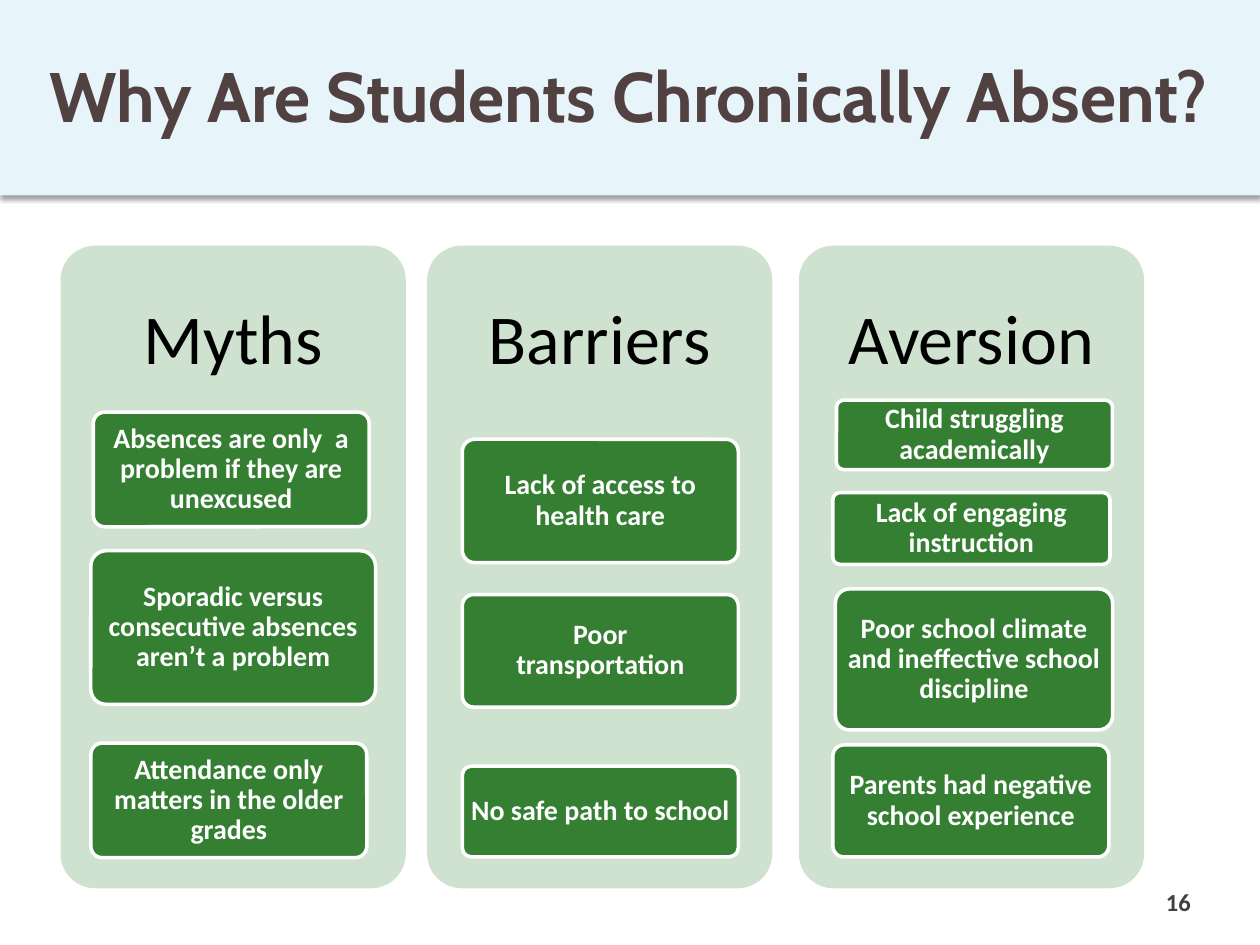
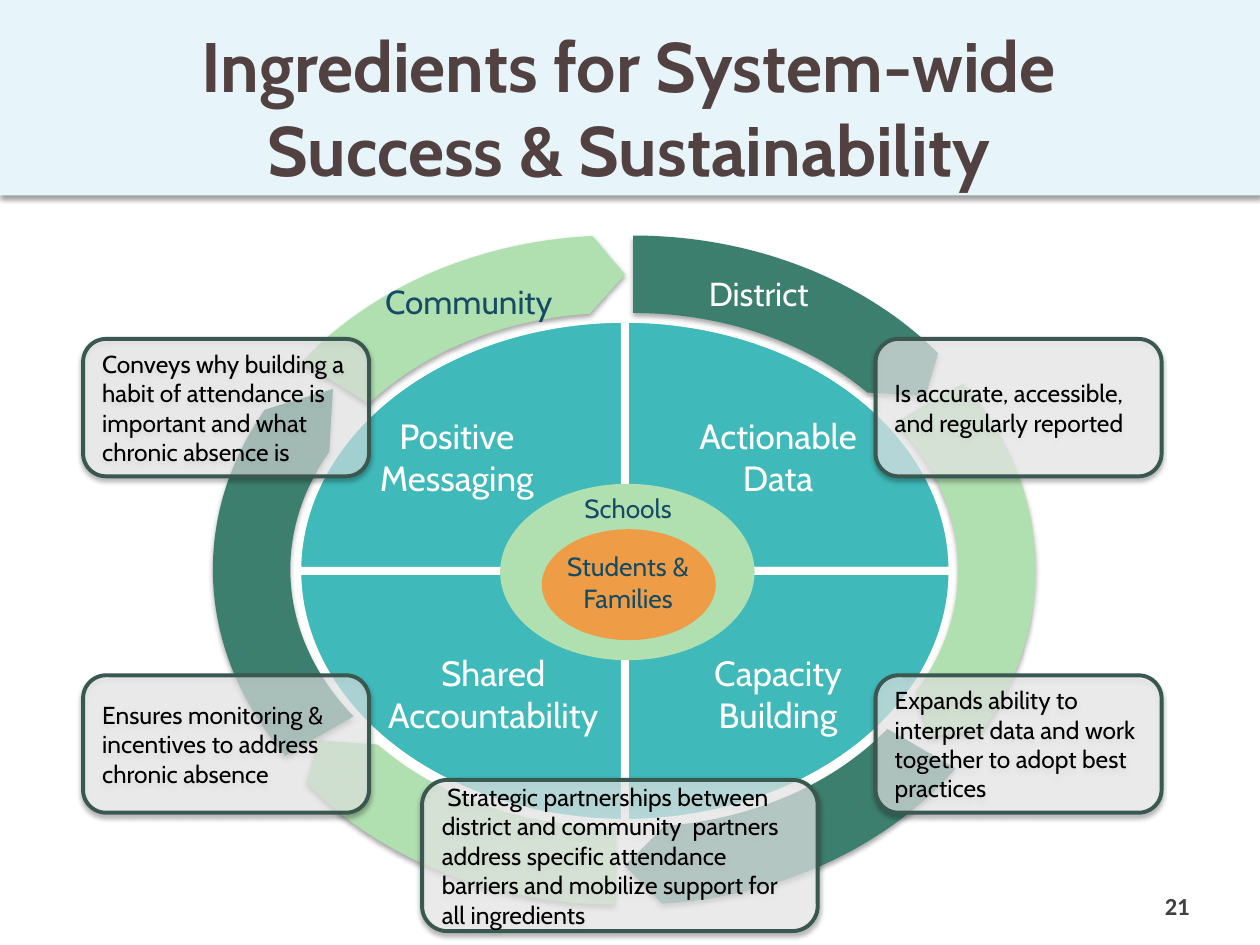
from lxml.etree import SubElement
from pptx import Presentation
from pptx.dml.color import RGBColor
from pptx.enum.shapes import MSO_SHAPE
from pptx.enum.text import MSO_ANCHOR, MSO_AUTO_SIZE, PP_ALIGN
from pptx.oxml.ns import qn
from pptx.util import Pt

SLIDE_W, SLIDE_H, BAND_H = 720, 540, 111.6
BAND, TITLE, GRAY, WHITE, BLACK = "E7F4FA", "514141", "404040", "FFFFFF", "000000"
COLUMN, CARD = "CFE2CF", "347F32"
TEAL, FOREST, MINT, ORANGE, NAVY, EDGE = "3FB9B9", "3D7F6E", "B1E0B0", "EE9D46", "154B64", "3A5750"

COLUMN_TOP, COLUMN_W, COLUMN_H, HEADING_H = 140.4, 197.3, 367.2, 110.2
CAUSES = [  # heading, left, cards as (text, left, top, width, height)
    ("Myths", 34.6, [
        ("Absences are only  a problem if they are unexcused", 53.3, 235.5, 157.7, 65.5),
        ("Sporadic versus consecutive absences aren’t a problem", 51.9, 314.7, 162.7, 87.8),
        ("Attendance only matters in the older grades", 51.9, 424.6, 157.7, 65.5)]),
    ("Barriers", 244.1, [
        ("Lack of access to health care", 264.2, 251, 157.7, 70.5),
        ("Poor\ntransportation", 264.2, 339.8, 157.7, 64.3),
        ("No safe path to school", 264.2, 437.8, 157.7, 51.8)]),
    ("Aversion", 456.5, [
        ("Child struggling academically", 478, 228.7, 157.7, 39.6),
        ("Lack of engaging instruction", 475.9, 281.5, 158.4, 41),
        ("Poor school climate and ineffective school discipline", 477.4, 336.5, 158.4, 80.6),
        ("Parents had negative school experience", 475.9, 425.7, 157.7, 64)]),
]

WHEEL = (169.9, 182.2, 374.4, 288)
QUARTER, FULL_TURN = 54, 216
QUARTER_STARTS = (162, 0, 54, 108)
ARROW_W, ARROW_H = 451.4, 368.6
ARROWS = [  # left, top, colour, thickness, head angle, end, start
    (136.1, 134.6, FOREST, 0.12, 3.28, 195.32, 162),
    (140.4, 141.1, MINT, 0.12, 3.28, 14.81, 198),
    (136.1, 148.3, FOREST, 0.12, 4.65, 50.33, 18),
    (126, 148.3, MINT, 0.12, 3.28, 87.83, 54),
    (121.7, 141.1, FOREST, 0.12, 5.57, 122.4, 90),
    (126, 134.6, MINT, 0.12, 4.1, 159.06, 127.24),
]
CORE = [((285.8, 276.5, 145.4, 100.8), MINT), ((309.6, 302.4, 99.4, 63.4), ORANGE)]
LABELS = [
    ("Students & Families", (316.8, 311, 84.2, 43.9), 15, NAVY),
    ("Schools", (316.8, 277.9, 84.2, 25.2), 15, NAVY),
    ("Actionable Data", (388.8, 233.3, 111.6, 55.4), 20, WHITE),
    ("Positive Messaging", (205.2, 233.3, 111.6, 55.4), 20, WHITE),
    ("Capacity Building", (388.8, 368.6, 111.6, 55.4), 20, WHITE),
    ("Shared Accountability", (211, 368.6, 141.8, 55.4), 20, WHITE),
    ("Community", (185.8, 157, 164.2, 30.2), 19, NAVY),
    ("District", (351.4, 152.6, 164.2, 30.2), 19, WHITE),
]
NOTE_LEFT, NOTE_RIGHT, NOTE_UPPER, NOTE_LOWER = 47.5, 500.4, 193.7, 385.9
NOTE_SIZE = (163.4, 78.5)
NOTES = [  # text, box, opacity in percent
    ("Is accurate, accessible, and regularly reported",
     (NOTE_RIGHT, NOTE_UPPER, *NOTE_SIZE), 64),
    ("Expands ability to interpret data and work together to adopt best practices",
     (NOTE_RIGHT, NOTE_LOWER, *NOTE_SIZE), 61),
    ("Conveys why building a habit of attendance is important and what chronic absence is",
     (NOTE_LEFT, NOTE_UPPER, *NOTE_SIZE), 55),
    ("Ensures monitoring & incentives to address chronic absence",
     (NOTE_LEFT, NOTE_LOWER, *NOTE_SIZE), 59),
    (" Strategic partnerships between district and community  partners address specific "
     "attendance barriers and mobilize support for all ingredients",
     (241.2, 445.7, 226.1, 86.4), 64),
]


def rgb(color):
    return RGBColor.from_string(color)


def pts(*values):
    return [Pt(v) for v in values]


def write(shape, text, size, color, font="Cabin", bold=False, align=PP_ALIGN.CENTER,
          anchor=MSO_ANCHOR.TOP, spacing=None, inset=None):
    tf = shape.text_frame
    tf.text = text
    tf.word_wrap = True
    tf.auto_size = MSO_AUTO_SIZE.NONE
    tf.vertical_anchor = anchor
    if inset is not None:
        tf.margin_left = tf.margin_right = tf.margin_top = tf.margin_bottom = Pt(inset)
    for p in tf.paragraphs:
        p.alignment = align
        if spacing:
            p.line_spacing = spacing
        for r in p.runs:
            r.font.name, r.font.size, r.font.bold = font, Pt(size), bold
            r.font.color.rgb = rgb(color)


def add_text(s, box, text, size, color, **style):
    write(s.shapes.add_textbox(*pts(*box)), text, size, color, **style)


def add_shape(s, kind, box, fill, line=None, width=0, adj=(), shadow=None, opacity=None):
    sp = s.shapes.add_shape(kind, *pts(*box))
    for i, value in enumerate(adj):
        sp.adjustments[i] = value
    sp.fill.solid()
    sp.fill.fore_color.rgb = rgb(fill)
    if opacity:
        clr = sp._element.spPr.find(f"{qn('a:solidFill')}/{qn('a:srgbClr')}")
        SubElement(clr, qn("a:alpha"), val=str(opacity * 1000))
    if line:
        sp.line.color.rgb = rgb(line)
        sp.line.width = Pt(width)
    else:
        sp.line.fill.background()
    sp.shadow.inherit = False
    if shadow:
        alpha, distance = shadow
        effects = sp._element.spPr.find(qn("a:effectLst"))
        outer = SubElement(effects, qn("a:outerShdw"), blurRad=str(Pt(3.1)),
                           dist=str(Pt(distance)), dir="5400000", rotWithShape="0")
        clr = SubElement(outer, qn("a:srgbClr"), val=BLACK)
        SubElement(clr, qn("a:alpha"), val=str(alpha * 1000))
    return sp


def add_slide(prs, title, title_box, number, number_box):
    s = prs.slides.add_slide(prs.slide_layouts[5])
    sp = s.shapes.title
    sp.left, sp.top, sp.width, sp.height = pts(*title_box)
    write(sp, title, 40, TITLE, bold=True)
    add_text(s, number_box, number, 14, GRAY, font="Calibri", bold=True,
             align=PP_ALIGN.RIGHT, anchor=MSO_ANCHOR.MIDDLE)
    return s


def add_band(s):
    band = add_shape(s, MSO_SHAPE.RECTANGLE, (0, 0, SLIDE_W, BAND_H), BAND, shadow=(38, 1.6))
    s.slide_layout.shapes._spTree.insert(2, band._element)


def build_causes(s):
    body = dict(font="Calibri", anchor=MSO_ANCHOR.MIDDLE, spacing=0.9)
    for heading, left, cards in CAUSES:
        add_shape(s, MSO_SHAPE.ROUNDED_RECTANGLE, (left, COLUMN_TOP, COLUMN_W, COLUMN_H),
                  COLUMN, adj=[0.1])
        add_text(s, (left, COLUMN_TOP, COLUMN_W, HEADING_H), heading, 40, BLACK,
                 inset=12.2, **body)
        for text, *box in cards:
            card = add_shape(s, MSO_SHAPE.ROUNDED_RECTANGLE, box, CARD, WHITE, 2, [0.1])
            write(card, text, 16, WHITE, bold=True, inset=3, **body)


def build_ingredients(s):
    soft = (35, 1.8)
    for start in QUARTER_STARTS:
        add_shape(s, MSO_SHAPE.PIE, WHEEL, TEAL, WHITE, 4.5,
                  [start, (start + QUARTER) % FULL_TURN])
    for left, top, color, *angles in ARROWS:
        add_shape(s, MSO_SHAPE.CIRCULAR_ARROW, (left, top, ARROW_W, ARROW_H), color,
                  adj=[*angles, 0.06], shadow=soft)
    for box, color in CORE:
        add_shape(s, MSO_SHAPE.OVAL, box, color)
    for text, box, size, color in LABELS:
        add_text(s, box, text, size, color)
    for text, box, opacity in NOTES:
        note = add_shape(s, MSO_SHAPE.ROUNDED_RECTANGLE, box, WHITE, EDGE, 2.25,
                         shadow=soft, opacity=opacity)
        write(note, text, 14, BLACK, align=PP_ALIGN.LEFT, anchor=MSO_ANCHOR.MIDDLE)


def main():
    prs = Presentation()
    prs.slide_width, prs.slide_height = pts(SLIDE_W, SLIDE_H)
    s = add_slide(prs, "Why Are Students Chronically Absent?", (9.4, 26.6, 699.8, 77),
                  "16", (519.8, 501.1, 167.8, 28.8))
    add_band(s)
    build_causes(s)
    s = add_slide(prs, "Ingredients for System-wide Success & Sustainability",
                  (54.7, 9.4, 609.1, 77), "21", (519.1, 503.3, 167.8, 28.8))
    build_ingredients(s)
    prs.save("out.pptx")


if __name__ == "__main__":
    main()
